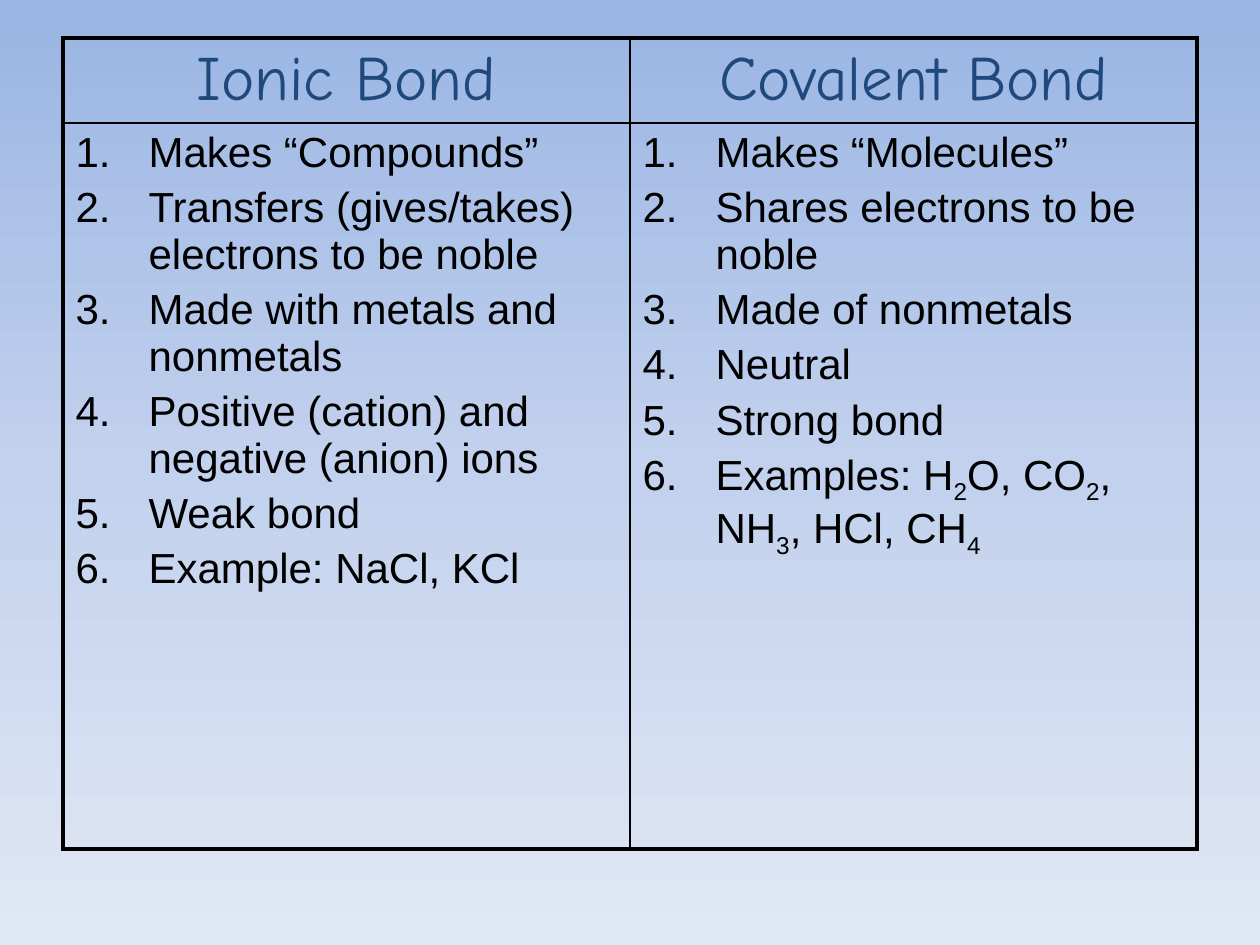
import copy

import pptx
import pptx.dml.color
import pptx.enum.text
import pptx.oxml
import pptx.oxml.ns
import pptx.util

# Content: an underscore marks the next digit as a subscript
BONDS = [
    ("Ionic Bond", [
        "Makes “Compounds”",
        "Transfers (gives/takes) electrons to be noble",
        "Made with metals and nonmetals",
        "Positive (cation) and negative (anion) ions",
        "Weak bond",
        "Example: NaCl, KCl",
    ]),
    ("Covalent Bond", [
        "Makes “Molecules”",
        "Shares electrons to be noble",
        "Made of nonmetals",
        "Neutral",
        "Strong bond",
        "Examples: H_2O, CO_2, NH_3, HCl, CH_4",
    ]),
]
HEX = {"title": "1F497D", "text": "000000", "line": "000000",
       "top": "9AB5E4", "mid": "C2D1ED", "low": "E1E8F5"}
TITLE = {"size": pptx.util.Pt(36), "name": "Comic Neue", "bold": False}
ITEM = {"size": pptx.util.Pt(24), "name": "Arial", "bold": False}

# Lengths in px, 126 to the inch
PX = 914400 // 126
WIDE, HIGH = 1260, 945
LEFT, TOP, COL = 63, 38, 567
ROWS = [78, 726]
INDENT = 73
THICK, THIN = 2.25, 1
NS = pptx.oxml.ns.nsdecls("a")


def px(n):
    return pptx.util.Emu(n * PX)


def xml(text):
    return pptx.oxml.parse_xml(text)


def add_run(para, text, look, tint, sub=False):
    run = para.add_run()
    run.text = text
    for key, val in look.items():
        setattr(run.font, key, val)
    run.font.color.rgb = pptx.dml.color.RGBColor.from_string(HEX[tint])
    if sub:
        run.font._element.set("baseline", "-25000")


def space(para):
    props = para._p.get_or_add_pPr()
    props.append(xml(f'<a:spcBef {NS}><a:spcPct val="20000"/></a:spcBef>'))
    return props


def fill_head(cell, text):
    para = cell.text_frame.paragraphs[0]
    para.alignment = pptx.enum.text.PP_ALIGN.CENTER
    space(para)
    add_run(para, text, TITLE, "title")


def fill_list(cell, items):
    frame = cell.text_frame
    for i, item in enumerate(items):
        para = frame.add_paragraph() if i else frame.paragraphs[0]
        props = space(para)
        props.set("marL", str(px(INDENT)))
        props.set("indent", str(-px(INDENT)))
        props.append(xml(f'<a:buFont {NS} typeface="+mj-lt"/>'))
        props.append(xml(f'<a:buAutoNum {NS} type="arabicPeriod"/>'))
        first, *rest = item.split("_")
        add_run(para, first, ITEM, "text")
        for part in rest:
            add_run(para, part[0], ITEM, "text", sub=True)
            if part[1:]:
                add_run(para, part[1:], ITEM, "text")


def frame_cell(cell, row, col):
    """Thick lines on the outer edges of the table, thin ones inside."""
    cell.fill.background()
    props = cell._tc.get_or_add_tcPr()
    outer = {"L": col == 0, "R": col == len(BONDS) - 1,
             "T": row == 0, "B": row == len(ROWS) - 1}
    for i, (side, edge) in enumerate(outer.items()):
        width = pptx.util.Pt(THICK if edge else THIN)
        props.insert(i, xml(
            f'<a:ln{side} {NS} w="{width}"><a:solidFill>'
            f'<a:srgbClr val="{HEX["line"]}"/></a:solidFill></a:ln{side}>'))


def paint_back(slide):
    fill = slide.background.fill
    fill.gradient()
    fill.gradient_angle = 270
    first = fill.gradient_stops[0]._gs
    first.addnext(copy.deepcopy(first))
    for i, (stop, tint) in enumerate(zip(fill.gradient_stops, ("top", "mid", "low"))):
        stop.position = i / 2
        stop.color.rgb = pptx.dml.color.RGBColor.from_string(HEX[tint])


def main():
    deck = pptx.Presentation()
    deck.slide_width, deck.slide_height = px(WIDE), px(HIGH)
    slide = deck.slides.add_slide(deck.slide_layouts[6])
    paint_back(slide)

    # Comparison table
    table = slide.shapes.add_table(
        len(ROWS), len(BONDS), px(LEFT), px(TOP),
        px(COL * len(BONDS)), px(sum(ROWS))).table
    table.first_row = table.horz_banding = False
    for row, high in zip(table.rows, ROWS):
        row.height = px(high)
    for col, (name, items) in enumerate(BONDS):
        table.columns[col].width = px(COL)
        fill_head(table.cell(0, col), name)
        fill_list(table.cell(1, col), items)
        for row in range(len(ROWS)):
            frame_cell(table.cell(row, col), row, col)

    deck.save("out.pptx")


if __name__ == "__main__":
    main()
